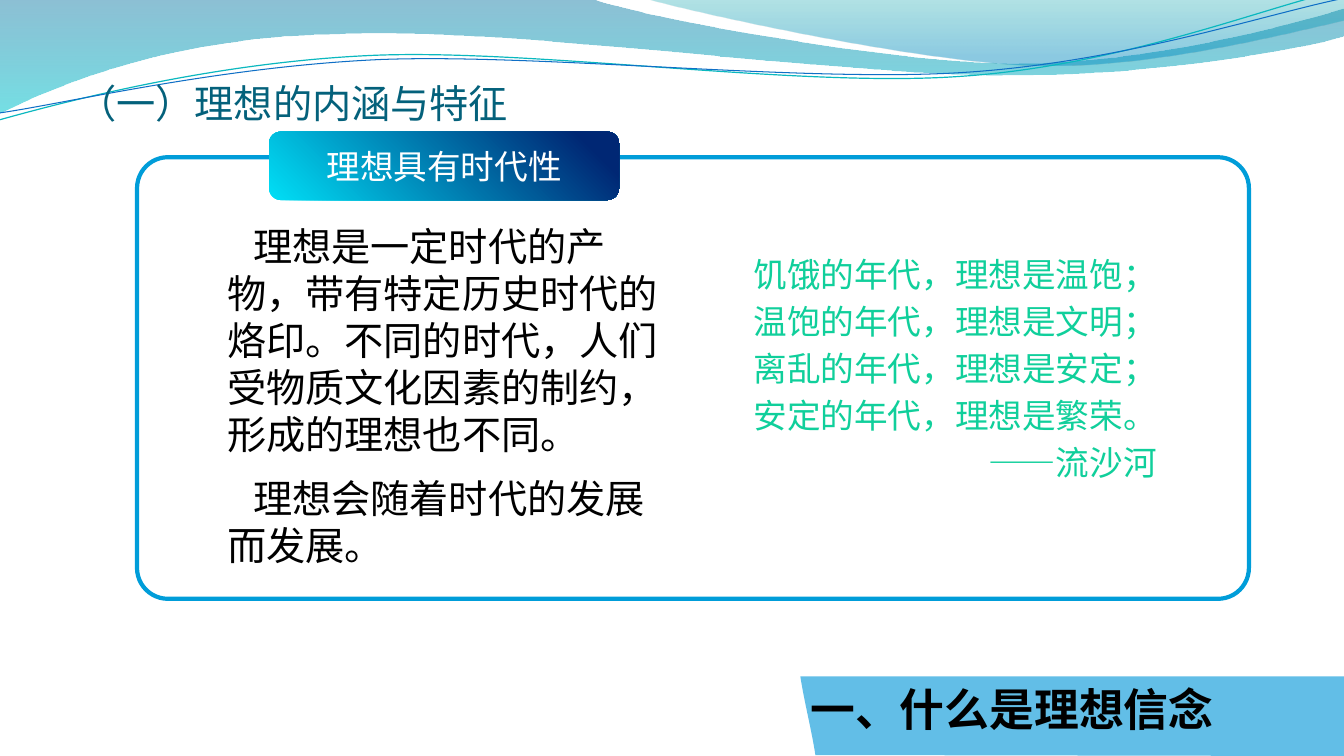
from lxml.etree import SubElement
from pptx import Presentation
from pptx.dml.color import RGBColor
from pptx.enum.shapes import MSO_SHAPE
from pptx.enum.text import MSO_ANCHOR, PP_ALIGN
from pptx.oxml.ns import qn
from pptx.util import Pt

# Content
TITLE = "（一）理想的内涵与特征"
BANNER = "一、什么是理想信念"
LABEL = "理想具有时代性"
BODY = [
    "理想是一定时代的产物，带有特定历史时代的烙印。不同的时代，人们受物质文化因素的制约，形成的理想也不同。",
    "理想会随着时代的发展而发展。",
]
POEM = [
    "饥饿的年代，理想是温饱；",
    "温饱的年代，理想是文明；",
    "离乱的年代，理想是安定；",
    "安定的年代，理想是繁荣。",
    "——流沙河",
]
SANS, SERIF = "Noto Sans CJK SC", "Times New Roman"
COLORS = {
    "title": "04617B", "text": "000000", "label": "FFFFFF", "poem": "10CF9B",
    "frame": "009DD9", "banner": "20A3DE",
    "label_start": "00DFF6", "label_end": "002774",
    "wave_blue": "0074A1", "wave_cyan": "00C6CF",
    "crest_teal": "00A1A9", "crest_blue": "008BBF",
    "line_teal": "0AB8BF", "line_blue": "0F6FC6",
}

# Outlines in points: a pair is a corner, six numbers are a Bézier segment
WAVE = [
    (0, 0), (422.6, -0.7), (456.5, 12.2, 637.2, 45.4, 727.9, 45.4),
    (819.4, 45.4, 920.2, 18.7, 959.8, 6.5), (961.2, 25.9),
    (943.9, 31.7, 835.2, 54.7, 715.7, 54), (596.9, 54, 366.5, 20.2, 247, 24.5),
    (123.8, 25.9, 43.9, 59.8, -0.7, 81.4), (0, 0),
]
CREST = [
    (460.1, -0.7), (488.9, 7.9, 654.5, 44.6, 738, 46.8),
    (821.5, 49.7, 923, 23, 959.8, 15.1), (959.8, 0), (460.1, -0.7),
]
BANNER_OUTLINE = [
    (571.7, 483.1), (960, 483.1), (960, 540), (582.5, 539.3),
    (579.6, 520.6, 574.6, 501.8, 571.7, 483.1),
]
# Gradient stops: position, colour, opacity in percent
WAVES = [
    (WAVE, [(0, "wave_blue", 45), (1, "wave_cyan", 55)]),
    (CREST, [(0, "crest_teal", 30), (0.8, "crest_blue", 45)]),
]
WAVE_LINES = [
    ([(-0.7, 85.7), (46.1, 72.7, 151.9, 44.6, 265.7, 39.6),
      (379.4, 34.6, 568.8, 62.6, 684, 54.7),
      (799.2, 47.5, 901.4, 5.8, 958.3, -7.2)], "line_teal", 0.85),
    ([(0, 80.6), (45.4, 74.2, 157, 47.5, 272.2, 42.5),
      (386.6, 38.2, 573.1, 59, 687.6, 51.8),
      (802.8, 44.6, 903.6, 10.1, 960.5, -1.4)], "line_blue", 0.75),
]

presentation = Presentation()
presentation.slide_width, presentation.slide_height = Pt(960), Pt(540)
slide = presentation.slides.add_slide(presentation.slide_layouts[6])


def color(name):
    return RGBColor.from_string(COLORS[name])


def add_outline(outline, close=True):
    """Draw the corners and control points, then join each three into a curve."""
    points = [(Pt(segment[i]), Pt(segment[i + 1]))
              for segment in outline for i in range(0, len(segment), 2)]
    builder = slide.shapes.build_freeform(*points[0])
    builder.add_line_segments(points[1:], close=close)
    shape = builder.convert_to_shape()
    shape.shadow.inherit = False
    steps = iter(list(shape._element.spPr.iter(qn("a:lnTo"))))
    for segment in outline[1:]:
        step = next(steps)
        if len(segment) == 6:
            curve = SubElement(step.getparent(), qn("a:cubicBezTo"))
            step.addprevious(curve)
            for part in (step, next(steps), next(steps)):
                curve.append(part[0])
                part.getparent().remove(part)
    return shape


def set_opacity(shape, percentages):
    fill_colors = shape._element.spPr.iter(qn("a:srgbClr"))
    for element, percent in zip(list(fill_colors), percentages):
        SubElement(element, qn("a:alpha")).set("val", str(percent * 1000))


def set_gradient(shape, stops, angle):
    shape.fill.gradient()
    shape.fill.gradient_angle = angle
    for stop, (position, name, _) in zip(shape.fill.gradient_stops, stops):
        stop.position = position
        stop.color.rgb = color(name)
    set_opacity(shape, [opacity for _, _, opacity in stops])
    shape.line.fill.background()


def add_rounded(left, top, width, height, radius):
    shape = slide.shapes.add_shape(
        MSO_SHAPE.ROUNDED_RECTANGLE, Pt(left), Pt(top), Pt(width), Pt(height))
    shape.adjustments[0] = radius
    shape.shadow.inherit = False
    return shape


def write(shape, lines, size, name, font=SANS, bold=False, align=PP_ALIGN.LEFT,
          anchor=MSO_ANCHOR.TOP, before=0, after=0, indent=0):
    frame = shape.text_frame
    frame.word_wrap = True
    frame.vertical_anchor = anchor
    for index, line in enumerate(lines):
        paragraph = frame.add_paragraph() if index else frame.paragraphs[0]
        paragraph.text = line
        paragraph.alignment = align
        paragraph.space_before, paragraph.space_after = Pt(before), Pt(after)
        paragraph.font.size, paragraph.font.bold = Pt(size), bold
        paragraph.font.name = font
        paragraph.font.color.rgb = color(name)
        properties = paragraph._p.get_or_add_pPr()
        properties.set("indent", str(Pt(indent)))
        properties.set("hangingPunct", "0")
        if font == SANS:
            default = properties.find(qn("a:defRPr"))
            SubElement(default, qn("a:ea")).set("typeface", font)


def add_text(left, top, width, height, lines, size, name, **options):
    box = slide.shapes.add_textbox(Pt(left), Pt(top), Pt(width), Pt(height))
    write(box, lines, size, name, **options)


# Waves along the top
for outline, stops in WAVES:
    set_gradient(add_outline(outline), stops, 270)
for outline, name, width in WAVE_LINES:
    wave_line = add_outline(outline, close=False)
    wave_line.fill.background()
    wave_line.line.color.rgb = color(name)
    wave_line.line.width = Pt(width)

# Title
add_text(48.2, 28.3, 864, 90, [TITLE], 28, "title", anchor=MSO_ANCHOR.MIDDLE)

# Section banner at the bottom right
banner = add_outline(BANNER_OUTLINE)
banner.fill.solid()
banner.fill.fore_color.rgb = color("banner")
set_opacity(banner, [70])
banner.line.fill.background()
write(banner, [BANNER], 32, "text", bold=True)

# Frame with its label
frame_box = add_rounded(97.9, 112.3, 794.2, 315.4, 0.07)
frame_box.fill.background()
frame_box.line.color.rgb = color("frame")
frame_box.line.width = Pt(3)
label = add_rounded(192.2, 94.1, 250, 48.8, 0.17)
set_gradient(label, [(0, "label_start", 100), (0.9, "label_end", 100)], 45)
write(label, [LABEL], 24, "label", align=PP_ALIGN.CENTER, anchor=MSO_ANCHOR.MIDDLE)

# Explanation and poem
add_text(155.2, 155.1, 324.7, 257, BODY, 28, "text", after=12, indent=18.6)
add_text(500, 177.5, 333.3, 180, POEM, 24, "poem", font=SERIF,
         align=PP_ALIGN.RIGHT, before=4.8)

presentation.save("out.pptx")
